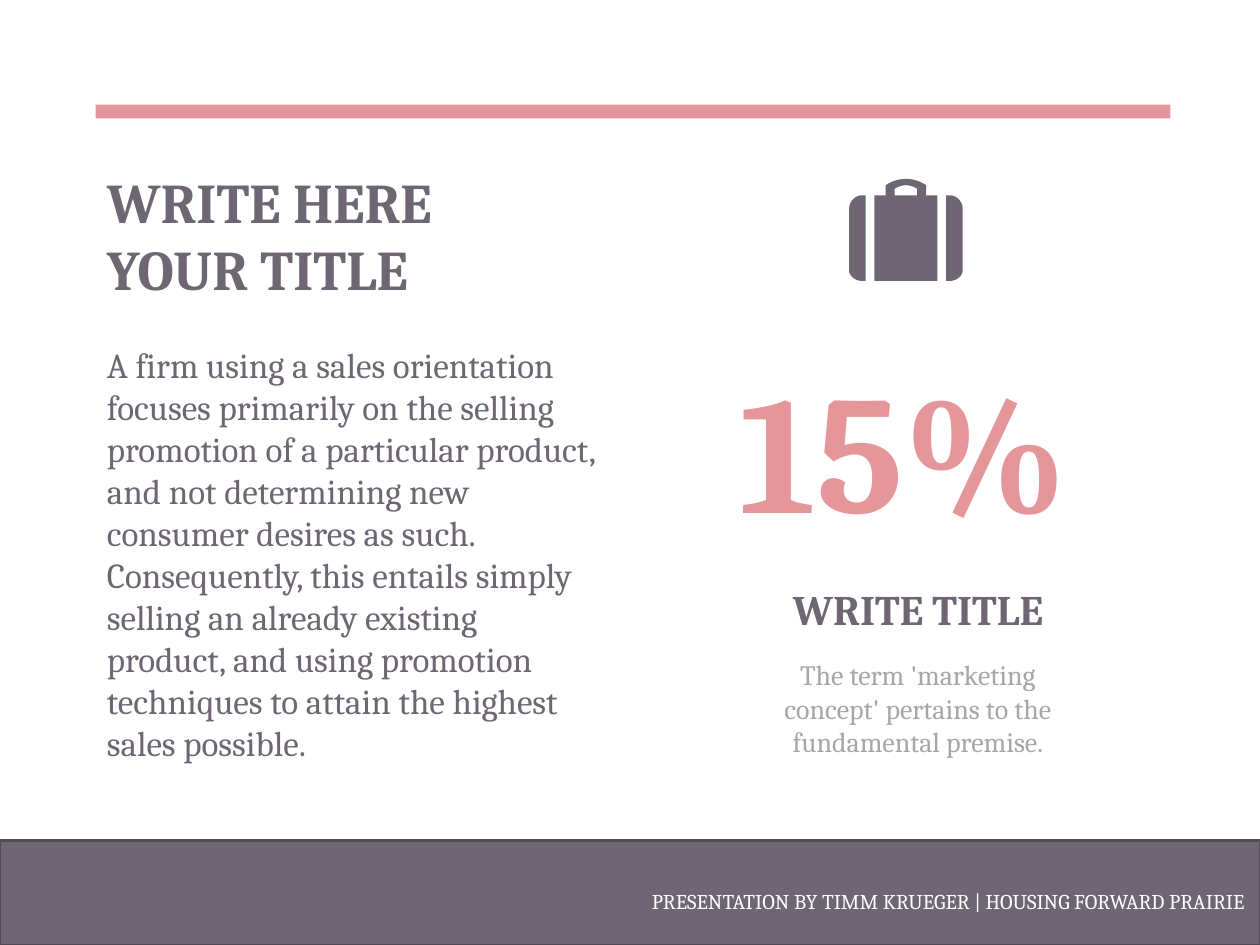
from dataclasses import dataclass

from pptx import Presentation
from pptx.dml.color import RGBColor
from pptx.enum.shapes import MSO_SHAPE
from pptx.enum.text import MSO_AUTO_SIZE, PP_ALIGN
from pptx.util import Inches, Pt

RECTANGLE = MSO_SHAPE.RECTANGLE
LEFT, CENTER, RIGHT = PP_ALIGN.LEFT, PP_ALIGN.CENTER, PP_ALIGN.RIGHT
GROW = MSO_AUTO_SIZE.SHAPE_TO_FIT_TEXT

Point = tuple[float, float]


@dataclass(frozen=True)
class Theme:
    font: str = "Cambria"
    plum: RGBColor = RGBColor(0x6E, 0x66, 0x73)
    plum_edge: RGBColor = RGBColor(0x51, 0x4B, 0x55)
    rose: RGBColor = RGBColor(0xE5, 0x96, 0x9B)
    gray: RGBColor = RGBColor(0xA6, 0xA6, 0xA6)
    white: RGBColor = RGBColor(0xFF, 0xFF, 0xFF)
    figure: int = 96
    title: int = 32
    subtitle: int = 24
    body: int = 20
    caption: int = 16
    credit: int = 12


THEME = Theme()


@dataclass(frozen=True)
class Box:
    left: float
    top: float
    width: float
    height: float

    def emu(self) -> list[int]:
        return [Inches(v) for v in (self.left, self.top, self.width, self.height)]


@dataclass(frozen=True)
class Label:
    text: str
    box: Box
    size: int
    color: RGBColor
    align: PP_ALIGN = LEFT
    bold: bool = False
    line_spacing: float = 1.0


LABELS = [
    Label("15%", Box(4.93, 2.69, 4.48, 1.72), THEME.figure, THEME.rose, CENTER, True),
    Label("The term 'marketing concept' pertains to the fundamental premise.",
          Box(5.89, 5.17, 2.79, 0.91), THEME.caption, THEME.gray, CENTER),
    Label("WRITE TITLE", Box(5.89, 4.58, 2.79, 0.5), THEME.subtitle, THEME.plum,
          CENTER, True),
    Label("A firm using a sales orientation focuses primarily on the selling "
          "promotion of a particular product, and not determining new consumer "
          "desires as such. Consequently, this entails simply selling an already "
          "existing product, and using promotion techniques to attain the highest "
          "sales possible.",
          Box(0.75, 2.68, 4.1, 3.8), THEME.body, THEME.plum),
    Label("WRITE HERE YOUR TITLE", Box(0.75, 1.28, 3.82, 1.18), THEME.title,
          THEME.plum, bold=True),
    Label("PRESENTATION BY TIMM KRUEGER | HOUSING FORWARD PRAIRIE",
          Box(4.59, 6.9, 5.39, 0.38), THEME.credit, THEME.white, RIGHT,
          line_spacing=1.5),
]


def add_label(slide, label: Label) -> None:
    frame = slide.shapes.add_textbox(*label.box.emu()).text_frame
    frame.word_wrap = True
    frame.auto_size = GROW
    paragraph = frame.paragraphs[0]
    paragraph.text = label.text
    paragraph.alignment = label.align
    paragraph.line_spacing = label.line_spacing
    font = paragraph.font
    font.name, font.size, font.bold = THEME.font, Pt(label.size), label.bold
    font.color.rgb = label.color


def paint(shape, fill: RGBColor, edge: RGBColor | None = None) -> None:
    shape.shadow.inherit = False
    shape.fill.solid()
    shape.fill.fore_color.rgb = fill
    if edge is None:
        shape.line.fill.background()
    else:
        shape.line.color.rgb = edge
        shape.line.width = Pt(1.5)


def add_band(slide, box: Box, fill: RGBColor, edge: RGBColor | None = None) -> None:
    paint(slide.shapes.add_shape(RECTANGLE, *box.emu()), fill, edge)


def curve(a: Point, b: Point, c: Point, d: Point, steps: int = 10) -> list[Point]:
    """Points along a cubic Bezier curve."""
    points = []
    for step in range(steps + 1):
        t = step / steps
        u = 1 - t
        weights = (u**3, 3 * u * u * t, 3 * u * t * t, t**3)
        points.append(tuple(sum(w * p[axis] for w, p in zip(weights, (a, b, c, d)))
                            for axis in (0, 1)))
    return points


def mirrored(points: list[Point], axis: float = 7.19) -> list[Point]:
    return [(2 * axis - x, y) for x, y in reversed(points)]


def add_suitcase(slide) -> None:
    top, bottom = 1.55, 2.23
    # Each outline is one left half, reflected about the middle of the case
    side = [(6.87, top),
            *curve((6.84, top), (6.79, top), (6.74, 1.6), (6.74, 1.65)),
            *curve((6.74, 2.15), (6.74, 2.19), (6.79, bottom), (6.84, bottom)),
            (6.87, bottom)]
    case = [(6.94, bottom), (6.94, top), (7.03, top),
            *curve((7.03, 1.47), (7.06, 1.45), (7.11, 1.42), (7.19, 1.42))]
    opening = [(7.1, top), *curve((7.1, 1.5), (7.11, 1.49), (7.15, 1.47), (7.19, 1.47))]
    outlines = [side, mirrored(side), case + mirrored(case),
                mirrored(opening + mirrored(opening))]

    contours = [[(Inches(x), Inches(y)) for x, y in outline] for outline in outlines]
    builder = slide.shapes.build_freeform(*contours[0][0])
    for index, (start, *rest) in enumerate(contours):
        if index:
            builder.move_to(*start)
        builder.add_line_segments(rest, close=True)
    paint(builder.convert_to_shape(), THEME.plum)


def main() -> None:
    deck = Presentation()
    deck.slide_width, deck.slide_height = Inches(10), Inches(7.5)
    slide = deck.slides.add_slide(deck.slide_layouts[6])

    # Footer band and top rule
    add_band(slide, Box(0, 6.67, 10, 0.83), THEME.plum, THEME.plum_edge)
    add_band(slide, Box(0.76, 0.83, 8.53, 0.11), THEME.rose)

    # Icon and wording
    add_suitcase(slide)
    for label in LABELS:
        add_label(slide, label)

    deck.save("out.pptx")


if __name__ == "__main__":
    main()
